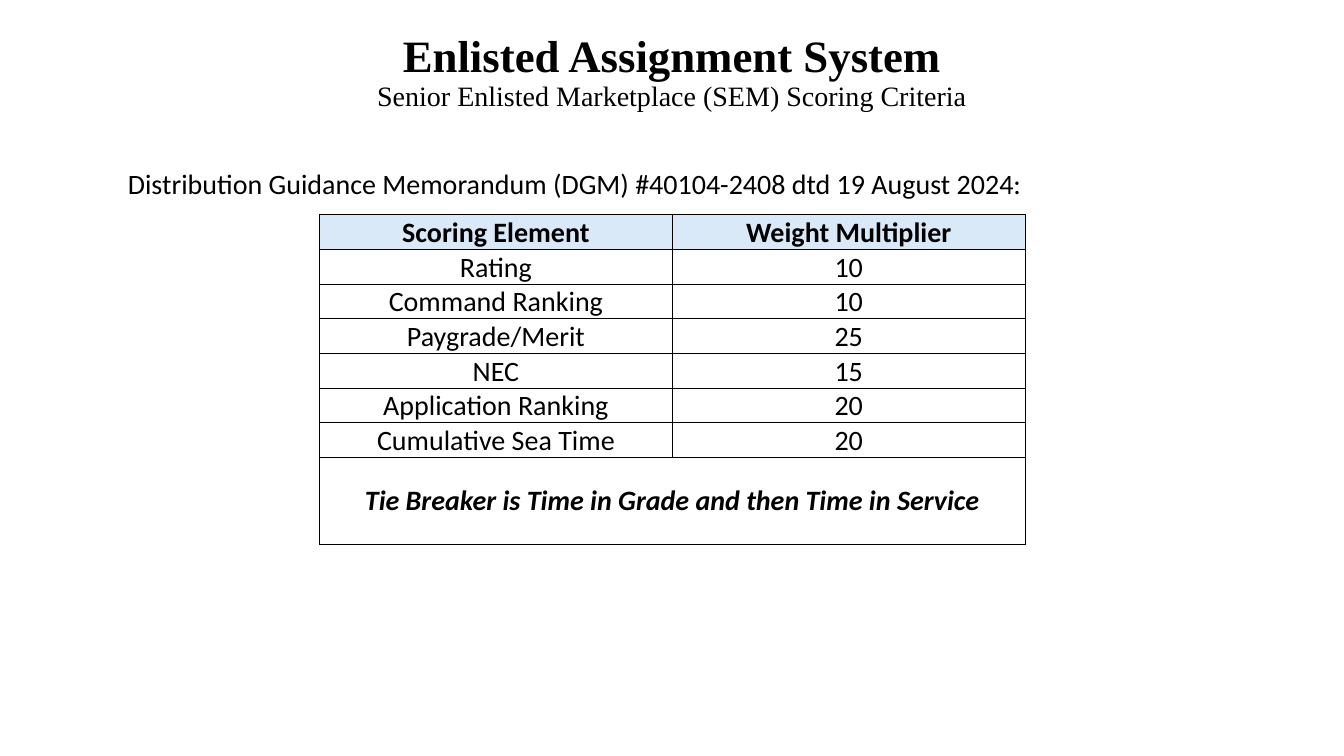
"""Build the Senior Enlisted Marketplace scoring criteria slide."""
from dataclasses import dataclass, field
from typing import Any

from lxml import etree
from pptx import Presentation
from pptx import util as u
from pptx.dml.color import RGBColor
from pptx.enum import text
from pptx.oxml import ns

COLORS = {"ink": "000000", "header": "DAE9F8"}
BODY_FORMAT = {"name": "Calibri", "size": u.Pt(20), "bold": False, "italic": False}
HEADER_FORMAT = BODY_FORMAT | {"bold": True}
TIE_FORMAT = HEADER_FORMAT | {"italic": True}
SUBTITLE_FORMAT = BODY_FORMAT | {"name": "Times New Roman"}
TITLE_FORMAT = SUBTITLE_FORMAT | {"size": u.Pt(32), "bold": True}
CELL_FORMAT = {
    "margin_left": u.Pt(0.7),
    "margin_right": u.Pt(0.7),
    "margin_top": u.Pt(0.7),
    "margin_bottom": u.Pt(0),
    "vertical_anchor": text.MSO_ANCHOR.MIDDLE,
}
ROW_HEIGHT, TIE_HEIGHT, COLUMN_WIDTH = 24.8, 62, 252


@dataclass
class Line:
    """One line of text and its font format."""
    words: str
    font: dict[str, Any] = field(default_factory=lambda: BODY_FORMAT)


@dataclass
class TextBlock:
    """A text box with one paragraph; its frame is in points."""
    frame: tuple[float, float, float, float]
    lines: list[Line]
    alignment: text.PP_ALIGN
    anchor: text.MSO_ANCHOR


@dataclass
class TableRow:
    """One row of the scoring table."""
    values: tuple[str, ...]
    font: dict[str, Any] = field(default_factory=lambda: BODY_FORMAT)
    height: float = ROW_HEIGHT
    fill: str | None = None


GUIDANCE = TextBlock(
    (84.24, 118.08, 792, 356.4),
    [Line("Distribution Guidance Memorandum (DGM) #40104-2408 dtd 19 August 2024:")],
    text.PP_ALIGN.LEFT, text.MSO_ANCHOR.TOP)
HEADING = TextBlock(
    (0, 0, 960, 104.4),
    [Line("Enlisted Assignment System", TITLE_FORMAT),
     Line("Senior Enlisted Marketplace (SEM) Scoring Criteria", SUBTITLE_FORMAT)],
    text.PP_ALIGN.CENTER, text.MSO_ANCHOR.MIDDLE)
SCORING_ROWS = [
    TableRow(("Scoring Element", "Weight Multiplier"), HEADER_FORMAT, fill="header"),
    TableRow(("Rating", "10")),
    TableRow(("Command Ranking", "10")),
    TableRow(("Paygrade/Merit", "25")),
    TableRow(("NEC", "15")),
    TableRow(("Application Ranking", "20")),
    TableRow(("Cumulative Sea Time", "20")),
    TableRow(("Tie Breaker is Time in Grade and then Time in Service",),
             TIE_FORMAT, TIE_HEIGHT),
]


def apply_format(target: Any, values: dict[str, Any]) -> None:
    """Set each named attribute on the target."""
    for name, value in values.items():
        setattr(target, name, value)


def add_line(paragraph: Any, line: Line) -> None:
    """Append a formatted run to a paragraph."""
    run = paragraph.add_run()
    run.text = line.words
    apply_format(run.font, line.font)
    run.font.color.rgb = RGBColor.from_string(COLORS["ink"])


def draw_text(slide: Any, block: TextBlock) -> None:
    """Draw a text block, breaking between its lines."""
    shape = slide.shapes.add_textbox(*map(u.Pt, block.frame))
    apply_format(shape.text_frame, {"word_wrap": True, "vertical_anchor": block.anchor})
    paragraph = shape.text_frame.paragraphs[0]
    apply_format(paragraph, {"alignment": block.alignment, "line_spacing": 0.9})
    for index, line in enumerate(block.lines):
        if index:
            paragraph.add_line_break()
        add_line(paragraph, line)


def add_borders(cell: Any) -> None:
    """Give a cell thin solid borders on all four sides."""
    properties = cell._tc.get_or_add_tcPr()
    for side in ("lnL", "lnR", "lnT", "lnB"):
        border = etree.SubElement(properties, ns.qn(f"a:{side}"), w=str(u.Pt(0.5)))
        fill = etree.SubElement(border, ns.qn("a:solidFill"))
        etree.SubElement(fill, ns.qn("a:srgbClr"), val=COLORS["ink"])


def draw_table(slide: Any, rows: list[TableRow], left: float, top: float) -> None:
    """Draw the scoring table, merging rows that hold a single value."""
    column_count = len(rows[0].values)
    height = sum(row.height for row in rows)
    table = slide.shapes.add_table(
        len(rows), column_count, u.Pt(left), u.Pt(top),
        u.Pt(COLUMN_WIDTH * column_count), u.Pt(height)).table
    apply_format(table, {"first_row": False, "horz_banding": False})
    for index, row in enumerate(rows):
        table.rows[index].height = u.Pt(row.height)
        cells = list(table.rows[index].cells)
        for cell in cells:
            apply_format(cell, CELL_FORMAT)
            add_borders(cell)
            if row.fill:
                cell.fill.solid()
                cell.fill.fore_color.rgb = RGBColor.from_string(COLORS[row.fill])
            else:
                cell.fill.background()
        if len(row.values) < column_count:
            cells[0].merge(cells[-1])
        for cell, value in zip(cells, row.values):
            paragraph = cell.text_frame.paragraphs[0]
            paragraph.alignment = text.PP_ALIGN.CENTER
            add_line(paragraph, Line(value, row.font))


def main() -> None:
    """Assemble and save the slide."""
    presentation = Presentation()
    apply_format(presentation, {"slide_width": u.Pt(960), "slide_height": u.Pt(540)})
    slide = presentation.slides.add_slide(presentation.slide_layouts[6])
    draw_text(slide, GUIDANCE)
    draw_table(slide, SCORING_ROWS, 228.24, 153.36)
    draw_text(slide, HEADING)
    presentation.save("out.pptx")


if __name__ == "__main__":
    main()
